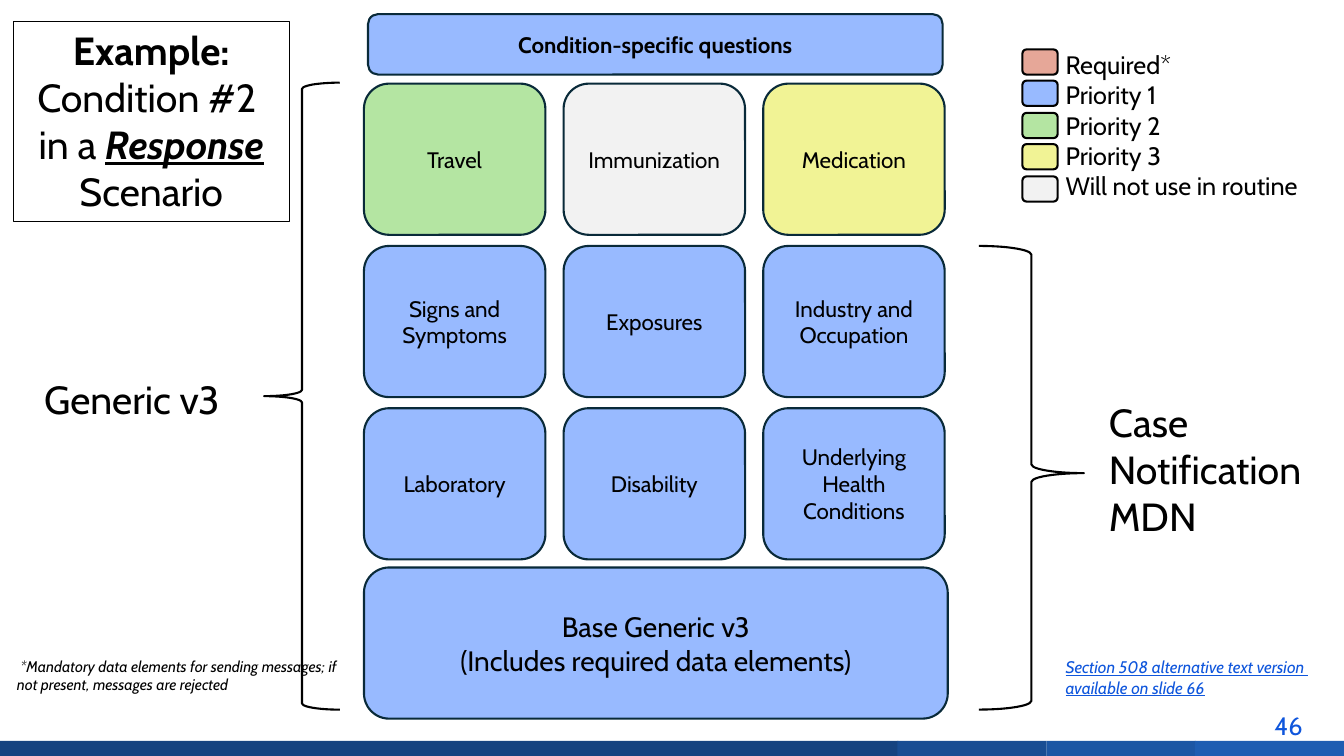
from dataclasses import dataclass

from pptx import Presentation
from pptx.dml.color import RGBColor
from pptx.enum.shapes import MSO_SHAPE
from pptx.enum.text import MSO_ANCHOR, PP_ALIGN
from pptx.util import Emu, Pt

PX = 9144
RECTANGLE = MSO_SHAPE.RECTANGLE
ROUNDED = MSO_SHAPE.ROUNDED_RECTANGLE
LEFT_BRACE = MSO_SHAPE.LEFT_BRACE
RIGHT_BRACE = MSO_SHAPE.RIGHT_BRACE
TOP, MIDDLE = MSO_ANCHOR.TOP, MSO_ANCHOR.MIDDLE
LEFT, CENTER = PP_ALIGN.LEFT, PP_ALIGN.CENTER


@dataclass(frozen=True)
class Theme:
    font: str = "Cabin"
    ink: str = "000000"
    link: str = "0F56DC"
    outline: str = "092A39"
    required: str = "E6A798"
    first: str = "98BAFF"
    second: str = "B4E5A2"
    third: str = "F1F395"
    unused: str = "F2F2F2"
    heading: int = 28
    base: int = 20
    legend: int = 18
    module: int = 16
    link_size: int = 12
    footnote: int = 11


THEME = Theme()

MODULES = [
    [("Travel", THEME.second), ("Immunization", THEME.unused), ("Medication", THEME.third)],
    [("Signs and Symptoms", THEME.first), ("Exposures", THEME.first),
     ("Industry and Occupation", THEME.first)],
    [("Laboratory", THEME.first), ("Disability", THEME.first),
     ("Underlying Health Conditions", THEME.first)],
]
LEGEND = [
    ("Required*", THEME.required),
    ("Priority 1", THEME.first),
    ("Priority 2", THEME.second),
    ("Priority 3", THEME.third),
    ("Will not use in routine", THEME.unused),
]
FOOTER = [(0, 891, "164380"), (890, 148, "194D93"), (1038, 148, "1C56A4"), (1185, 148, "1E5DB2")]
TITLE_LINES = [
    [("Example: ", {"bold": True}), ("Condition #2 ", {})],
    [("in a ", {}), ("Response", {"bold": True, "italic": True, "underline": True}),
     (" Scenario", {})],
]


def emu(box):
    """Turn px lengths into EMU."""
    return [Emu(length * PX) for length in box]


def add_run(paragraph, text, size, color=THEME.ink, **formats):
    """Add one formatted run."""
    run = paragraph.add_run()
    run.text = text
    for name, value in {"name": THEME.font, "size": Pt(size), **formats}.items():
        setattr(run.font, name, value)
    run.font.color.rgb = RGBColor.from_string(color)


def write_lines(frame, lines, size, align=LEFT, anchor=TOP, **formats):
    """Fill a text frame with one paragraph per line."""
    frame.word_wrap = True
    frame.vertical_anchor = anchor
    for index, line in enumerate(lines):
        paragraph = frame.add_paragraph() if index else frame.paragraphs[0]
        paragraph.alignment = align
        add_run(paragraph, line, size, **formats)


def add_text(slide, box, lines, size, **formats):
    """Add a wrapping text box."""
    text_box = slide.shapes.add_textbox(*emu(box))
    write_lines(text_box.text_frame, lines, size, **formats)


def add_figure(slide, kind, box, fill=None, line=None):
    """Add a preset shape with a plain fill and outline."""
    shape = slide.shapes.add_shape(kind, *emu(box))
    shape.shadow.inherit = False
    if fill:
        shape.fill.solid()
        shape.fill.fore_color.rgb = RGBColor.from_string(fill)
    else:
        shape.fill.background()
    if line:
        shape.line.color.rgb = RGBColor.from_string(line)
        shape.line.width = Pt(1.5)
    else:
        shape.line.fill.background()
    return shape


def add_block(slide, box, lines, size=THEME.module, fill=THEME.first, **formats):
    """Add a rounded block with centred text."""
    block = add_figure(slide, ROUNDED, box, fill, THEME.outline)
    write_lines(block.text_frame, lines, size, CENTER, MIDDLE, **formats)


def add_title(slide):
    """Add the framed title with its mixed emphasis."""
    title = slide.shapes.add_textbox(*emu((13, 21, 274, 199)))
    title.line.color.rgb = RGBColor.from_string(THEME.ink)
    title.line.width = Pt(0.75)
    title.text_frame.word_wrap = True
    paragraph = title.text_frame.paragraphs[0]
    paragraph.alignment = CENTER
    for index, line in enumerate(TITLE_LINES):
        if index:
            paragraph.add_line_break()
        for text, formats in line:
            add_run(paragraph, text, THEME.heading, **formats)


def add_modules(slide):
    """Add the module grid between its top and base blocks."""
    for row, modules in enumerate(MODULES):
        for column, (label, fill) in enumerate(modules):
            box = (361 + 198 * column, 83 + 161 * row, 180, 150)
            add_block(slide, box, [label], fill=fill)
    add_block(slide, (365, 14, 570, 60), ["Condition-specific questions"], bold=True)
    add_block(slide, (361, 563, 579, 150),
              ["Base Generic v3", "(Includes required data elements)"], THEME.base)


def add_braces(slide):
    """Add both braces and their labels."""
    add_figure(slide, LEFT_BRACE, (262, 82, 75, 622), line=THEME.ink)
    brace = add_figure(slide, RIGHT_BRACE, (971, 244, 104, 460), line=THEME.ink)
    brace.adjustments[1] = 0.49
    add_text(slide, (34, 367, 204, 57), ["Generic v3"], THEME.heading)
    add_text(slide, (1090, 390, 222, 151), ["Case Notification MDN"], THEME.heading)


def add_legend(slide):
    """Add the priority swatches and their labels."""
    for index, (_, fill) in enumerate(LEGEND):
        add_figure(slide, ROUNDED, (1014, 49 + 63 * index // 2, 35, 25), fill, THEME.ink)
    add_text(slide, (1047, 44, 286, 165), [label for label, _ in LEGEND], THEME.legend)


def add_footer(slide):
    """Add the notes, page number and bottom bar."""
    for left, width, fill in FOOTER:
        add_figure(slide, RECTANGLE, (left, 735, width, 16), fill)
    add_text(slide, (7, 647, 338, 66),
             [" *Mandatory data elements for sending messages; if not present, messages are rejected"],
             THEME.footnote, italic=True)
    add_text(slide, (1047, 647, 286, 50),
             ["Section 508 alternative text version ", "available on slide 66"],
             THEME.link_size, color=THEME.link, italic=True, underline=True)
    add_text(slide, (1254, 700, 54, 34), ["46"], THEME.legend, color=THEME.link)


def main():
    """Build and save the slide."""
    presentation = Presentation()
    presentation.slide_width, presentation.slide_height = emu((1333, 750))
    slide = presentation.slides.add_slide(presentation.slide_layouts[6])
    add_footer(slide)
    add_title(slide)
    add_modules(slide)
    add_braces(slide)
    add_legend(slide)
    presentation.save("out.pptx")


if __name__ == "__main__":
    main()
